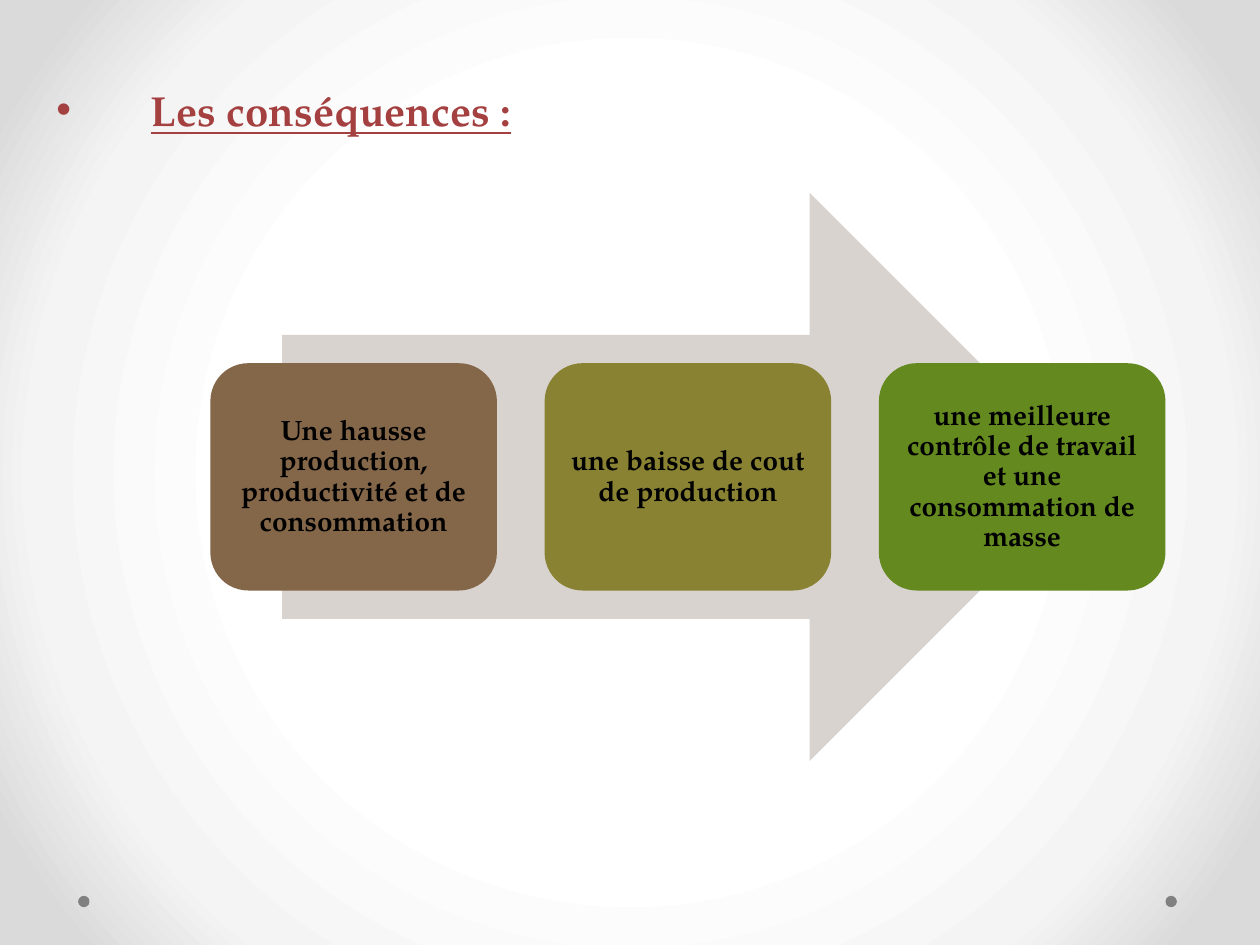
from pptx import Presentation
from pptx.dml.color import RGBColor
from pptx.enum.shapes import MSO_SHAPE
from pptx.enum.text import MSO_ANCHOR, PP_ALIGN
from pptx.oxml import parse_xml
from pptx.oxml.ns import nsdecls, qn
from pptx.util import Inches, Pt

WIDE, HIGH = 10, 7.5
FONT = "TeX Gyre Pagella"
STEPS = [
    ("Une hausse production, productivité et de consommation", "846648"),
    ("une baisse de cout de production", "888232"),
    ("une meilleure contrôle de travail et une consommation de masse", "63891F"),
]


def color(code):
    """Turn a hex string into a colour."""
    return RGBColor.from_string(code)


def write(shape, text, size=16, tint="000000", align=PP_ALIGN.CENTER, line=False,
          space=None, after=0, inset=None, anchor=MSO_ANCHOR.MIDDLE):
    """Put one bold paragraph into a shape and return it."""
    frame = shape.text_frame
    frame.word_wrap = True
    frame.vertical_anchor = anchor
    if inset is not None:
        frame.margin_left = frame.margin_right = Inches(inset)
        frame.margin_top = frame.margin_bottom = Inches(inset)
    para = frame.paragraphs[0]
    para.alignment, para.line_spacing, para.space_after = align, space, Pt(after)
    run = para.add_run()
    run.text = text
    font = run.font
    font.name, font.size, font.bold, font.underline = FONT, Pt(size), True, line
    font.color.rgb = color(tint)
    return para


def draw(slide, kind, box, tint):
    """Add a flat preset shape in the given box."""
    shape = slide.shapes.add_shape(kind, *map(Inches, box))
    shape.shadow.inherit = False
    shape.fill.solid()
    shape.fill.fore_color.rgb = color(tint)
    shape.line.fill.background()
    return shape


def backdrop(slide):
    """Fill the slide with a round gradient, light at the centre."""
    slide.background.fill.solid()
    stops = "".join(
        f'<a:gs pos="{share}000"><a:srgbClr val="{tint}"/></a:gs>'
        for share, tint in [(50, "FFFFFF"), (76, "F4F4F4"), (92, "DADADA")])
    fill = parse_xml(
        f'<a:gradFill {nsdecls("a")} rotWithShape="1"><a:gsLst>{stops}</a:gsLst>'
        '<a:path path="circle"><a:fillToRect l="50000" t="50000" r="50000" b="50000"/>'
        '</a:path></a:gradFill>')
    base = slide.background.fill._xPr
    base.replace(base.find(qn("a:solidFill")), fill)


def corners(slide, box):
    """Place a small dot at each end of the footer box."""
    left, top, width, size = box
    for x in (left, left + width - size):
        draw(slide, MSO_SHAPE.OVAL, (x, top, size, size), "808080")


def heading(slide, box, text):
    """Write the bulleted, underlined heading."""
    shape = slide.shapes.add_textbox(*map(Inches, box))
    para = write(shape, text, size=24, tint="A54040", align=PP_ALIGN.LEFT,
                 line=True, anchor=MSO_ANCHOR.TOP)
    props = para._p.get_or_add_pPr()
    props.set("marL", str(Inches(0.75)))
    props.set("indent", str(-Inches(0.75)))
    props.append(parse_xml(f'<a:buFont {nsdecls("a")} typeface="Arial"/>'))
    props.append(parse_xml(f'<a:buChar {nsdecls("a")} char="•"/>'))


def process(slide, box, steps):
    """Lay equal cards over a wide arrow, with gaps of a sixth of a card."""
    left, top, width, height = box
    draw(slide, MSO_SHAPE.RIGHT_ARROW,
         (left + width * 0.075, top, width * 0.85, height), "D9D3CF")
    card = width / (len(steps) + (len(steps) - 1) / 6)
    for col, (text, tint) in enumerate(steps):
        place = (left + col * card * 7 / 6, top + height * 0.3, card, height * 0.4)
        shape = draw(slide, MSO_SHAPE.ROUNDED_RECTANGLE, place, tint)
        write(shape, text, space=0.9, after=5.6, inset=0.07)


def main():
    """Build and save the slide."""
    deck = Presentation()
    deck.slide_width, deck.slide_height = Inches(WIDE), Inches(HIGH)
    slide = deck.slides.add_slide(deck.slide_layouts[6])
    backdrop(slide)
    corners(slide, (0.62, 7.11, 8.72, 0.09))
    heading(slide, (0.35, 0.62, 3.84, 0.5), "Les conséquences :")
    process(slide, (1.67, 1.53, 7.58, 4.51), STEPS)
    deck.save("out.pptx")


if __name__ == "__main__":
    main()
